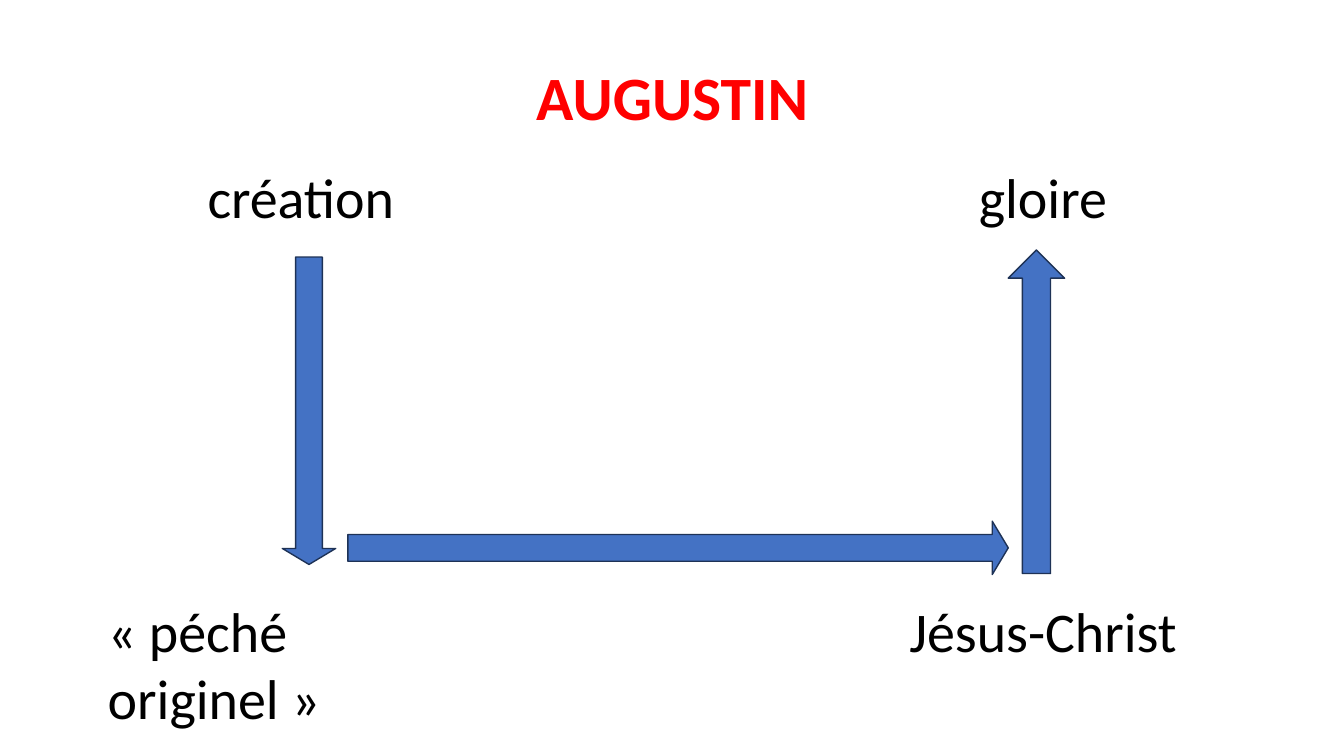
"""Build the Augustin slide: from creation, through sin and Christ, to glory."""
from pptx import Presentation
from pptx.dml.color import RGBColor
from pptx.enum.shapes import MSO_SHAPE as Preset
from pptx.enum.text import MSO_AUTO_SIZE as AutoSize
from pptx.util import Emu, Pt

EMU_PER_PX = 9144
COLORS = {"title": "FF0000", "text": "000000", "arrow": "4472C4", "outline": "1E3256"}


class SlideBuilder:
    """Hold the style and the current slide."""

    def __init__(self, slide, font_name="Calibri"):
        self.slide = slide
        self.font_name = font_name

    def place(self, *lengths):
        return [Emu(length * EMU_PER_PX) for length in lengths]

    def color(self, name):
        return RGBColor.from_string(COLORS[name])

    def label(self, text, bounds, size=40, color="text", bold=False, wrap=True):
        box = self.slide.shapes.add_textbox(*self.place(*bounds))
        frame = box.text_frame
        frame.text = text
        frame.word_wrap = wrap
        frame.auto_size = AutoSize.SHAPE_TO_FIT_TEXT
        font = frame.paragraphs[0].runs[0].font
        font.name = self.font_name
        font.size = Pt(size)
        font.bold = bold
        font.color.rgb = self.color(color)

    def arrow(self, preset, bounds, head=0.5, rotation=0):
        shape = self.slide.shapes.add_shape(preset, *self.place(*bounds))
        shape.adjustments[0] = 0.5
        shape.adjustments[1] = head
        shape.rotation = rotation
        shape.shadow.inherit = False
        shape.fill.solid()
        shape.fill.fore_color.rgb = self.color("arrow")
        shape.line.color.rgb = self.color("outline")
        shape.line.width = Pt(1)


def main():
    deck = Presentation()
    deck.slide_width, deck.slide_height = Emu(1333 * EMU_PER_PX), Emu(750 * EMU_PER_PX)
    builder = SlideBuilder(deck.slides.add_slide(deck.slide_layouts[6]))

    builder.label("AUGUSTIN", (522, 54, 301, 84), size=44, color="title", bold=True)
    builder.label("création", (196, 156, 222, 77))
    builder.label("Jésus-Christ", (892, 587, 290, 77))
    builder.label("gloire", (961, 156, 147, 77), wrap=False)
    builder.arrow(Preset.DOWN_ARROW, (280, 255, 53, 305), head=0.3)
    builder.arrow(Preset.UP_ARROW, (1000, 248, 56, 321))
    builder.label("« péché originel »", (97, 587, 370, 77))
    builder.arrow(Preset.DOWN_ARROW, (646, 216, 53, 655), head=0.3, rotation=270)

    deck.save("out.pptx")


if __name__ == "__main__":
    main()
